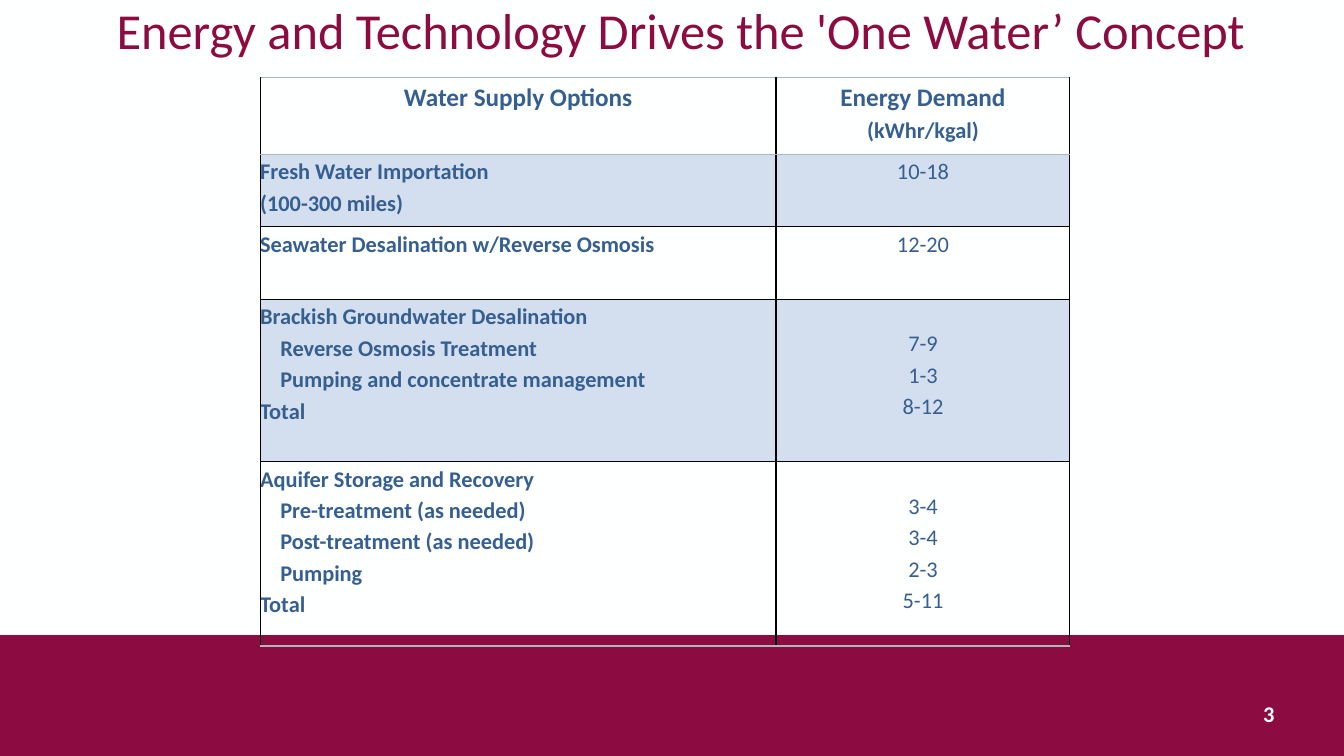
from collections import namedtuple
from dataclasses import dataclass

from lxml import etree
from pptx import Presentation
from pptx.dml.color import RGBColor
from pptx.enum.shapes import MSO_SHAPE
from pptx.enum.text import MSO_ANCHOR, MSO_AUTO_SIZE, PP_ALIGN
from pptx.oxml.ns import qn
from pptx.util import Inches, Pt

RECTANGLE = MSO_SHAPE.RECTANGLE
MIDDLE, TOP = MSO_ANCHOR.MIDDLE, MSO_ANCHOR.TOP
LEFT, CENTER = PP_ALIGN.LEFT, PP_ALIGN.CENTER
FIXED_SIZE = MSO_AUTO_SIZE.NONE
TITLE_ONLY = 5

Box = namedtuple("Box", "left top width height")


@dataclass(frozen=True)
class Theme:
    font: str = "Calibri"
    paper: str = "FEFFFF"
    maroon: str = "8C0B41"
    ink: str = "365F91"
    band: str = "D3DFEE"
    rule: str = "A7BABE"
    grid: str = "000000"
    title_size: int = 36
    heading_size: int = 18
    body_size: int = 16
    line_spacing: float = 1.15


THEME = Theme()
SLIDE = Box(0, 0, 13.33, 7.5)
FOOTER = Box(0, 0.84 * SLIDE.height, SLIDE.width, 0.16 * SLIDE.height)
TITLE = Box(0.42, 0, 12.67, 0.66)
TABLE = Box(2.58, 0.77, 8.03, 5.64)

COLUMN_WIDTHS = [5.12, 2.91]
ROW_HEIGHTS = [0.76, 0.72, 0.72, 1.61, 1.83]
STEP_INDENT = 0.2
DEMAND_DROP = 0.27

HEADINGS = [
    [("Water Supply Options", THEME.heading_size)],
    [("Energy Demand", THEME.heading_size), ("(kWhr/kgal)", THEME.body_size)],
]
# Supply option lines as (text, is a step), then its energy demands.
OPTIONS = [
    ([("Fresh Water Importation", False), ("(100-300 miles)", False)], ["10-18"]),
    ([("Seawater Desalination w/Reverse Osmosis", False)], ["12-20"]),
    ([("Brackish Groundwater Desalination", False),
      ("Reverse Osmosis Treatment", True),
      ("Pumping and concentrate management", True),
      ("Total", False)], ["7-9", "1-3", "8-12"]),
    ([("Aquifer Storage and Recovery", False),
      ("Pre-treatment (as needed)", True),
      ("Post-treatment (as needed)", True),
      ("Pumping", True),
      ("Total", False)], ["3-4", "3-4", "2-3", "5-11"]),
]


def emu(box):
    return [Inches(length) for length in box]


def rgb(color):
    return RGBColor.from_string(color)


def add_line(frame, index, text, size, color, bold=False, align=LEFT,
             spacing=1.0, indent=0):
    paragraph = frame.paragraphs[0] if index == 0 else frame.add_paragraph()
    paragraph.alignment = align
    paragraph.line_spacing = spacing
    if indent:
        paragraph._p.get_or_add_pPr().set("marL", str(Inches(indent)))
    run = paragraph.add_run()
    run.text = text
    run.font.name = THEME.font
    run.font.size = Pt(size)
    run.font.bold = bold
    run.font.color.rgb = rgb(color)


def set_border(cell, side, color, width):
    line = etree.SubElement(cell._tc.get_or_add_tcPr(), qn(f"a:ln{side}"),
                            w=str(Pt(width)))
    fill = etree.SubElement(line, qn("a:solidFill"))
    etree.SubElement(fill, qn("a:srgbClr"), val=color)


def style_cell(cell, row, column):
    last_row, last_column = len(ROW_HEIGHTS) - 1, len(COLUMN_WIDTHS) - 1
    set_border(cell, "L", THEME.grid, 1 if column == 0 else 1.5)
    set_border(cell, "R", THEME.grid, 1 if column == last_column else 1.5)
    set_border(cell, "T", THEME.rule if row <= 1 else THEME.grid, 1)
    set_border(cell, "B", THEME.rule if row in (0, last_row) else THEME.grid, 1)
    cell.margin_left = cell.margin_right = cell.margin_top = cell.margin_bottom = 0
    cell.vertical_anchor = TOP
    if row % 2:
        cell.fill.solid()
        cell.fill.fore_color.rgb = rgb(THEME.band)
    else:
        cell.fill.background()


def add_title(slide, box):
    title = slide.shapes.title
    title.left, title.top, title.width, title.height = emu(box)
    frame = title.text_frame
    frame.word_wrap = True
    frame.auto_size = FIXED_SIZE
    frame.vertical_anchor = MIDDLE
    add_line(frame, 0, "Energy and Technology Drives the 'One Water’ Concept",
             THEME.title_size, THEME.maroon, align=CENTER, spacing=0.9)


def add_footer(slide, box):
    band = slide.shapes.add_shape(RECTANGLE, *emu(box))
    band.shadow.inherit = False
    band.fill.solid()
    band.fill.fore_color.rgb = rgb(THEME.maroon)
    band.line.fill.background()
    number_box = Box(box.left + box.width - 0.9, box.top + box.height / 2, 0.84, 0.4)
    page_number = slide.shapes.add_textbox(*emu(number_box))
    page_number.text_frame.word_wrap = True
    add_line(page_number.text_frame, 0, "3", THEME.body_size, THEME.paper, bold=True)


def add_energy_table(slide, box):
    table = slide.shapes.add_table(len(ROW_HEIGHTS), len(COLUMN_WIDTHS),
                                   *emu(box)).table
    table.horz_banding = False
    for column, width in zip(table.columns, COLUMN_WIDTHS):
        column.width = Inches(width)
    for row, height in zip(table.rows, ROW_HEIGHTS):
        row.height = Inches(height)
    for row in range(len(ROW_HEIGHTS)):
        for column in range(len(COLUMN_WIDTHS)):
            style_cell(table.cell(row, column), row, column)

    for column, heading in enumerate(HEADINGS):
        for index, (text, size) in enumerate(heading):
            add_line(table.cell(0, column).text_frame, index, text, size, THEME.ink,
                     bold=True, align=CENTER, spacing=THEME.line_spacing)

    for row, (supply, demands) in enumerate(OPTIONS, start=1):
        for index, (text, is_step) in enumerate(supply):
            add_line(table.cell(row, 0).text_frame, index, text, THEME.body_size,
                     THEME.ink, bold=True, spacing=THEME.line_spacing,
                     indent=STEP_INDENT if is_step else 0)
        demand_cell = table.cell(row, 1)
        if len(demands) > 1:
            demand_cell.margin_top = Inches(DEMAND_DROP)
        for index, demand in enumerate(demands):
            add_line(demand_cell.text_frame, index, demand, THEME.body_size,
                     THEME.ink, align=CENTER, spacing=THEME.line_spacing)


def main():
    deck = Presentation()
    deck.slide_width, deck.slide_height = Inches(SLIDE.width), Inches(SLIDE.height)
    slide = deck.slides.add_slide(deck.slide_layouts[TITLE_ONLY])
    slide.background.fill.solid()
    slide.background.fill.fore_color.rgb = rgb(THEME.paper)
    add_footer(slide, FOOTER)
    add_title(slide, TITLE)
    add_energy_table(slide, TABLE)
    deck.save("out.pptx")


if __name__ == "__main__":
    main()
